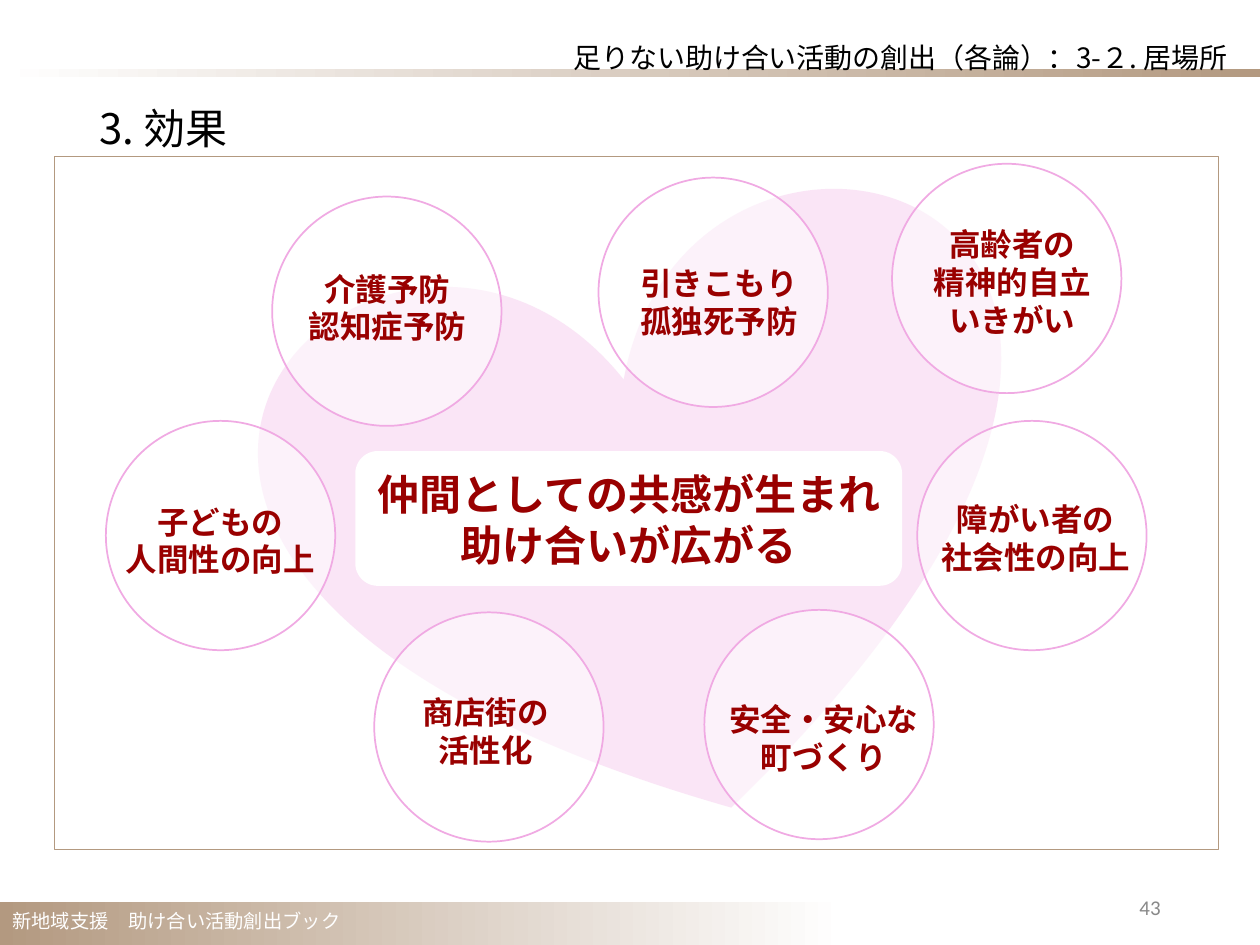
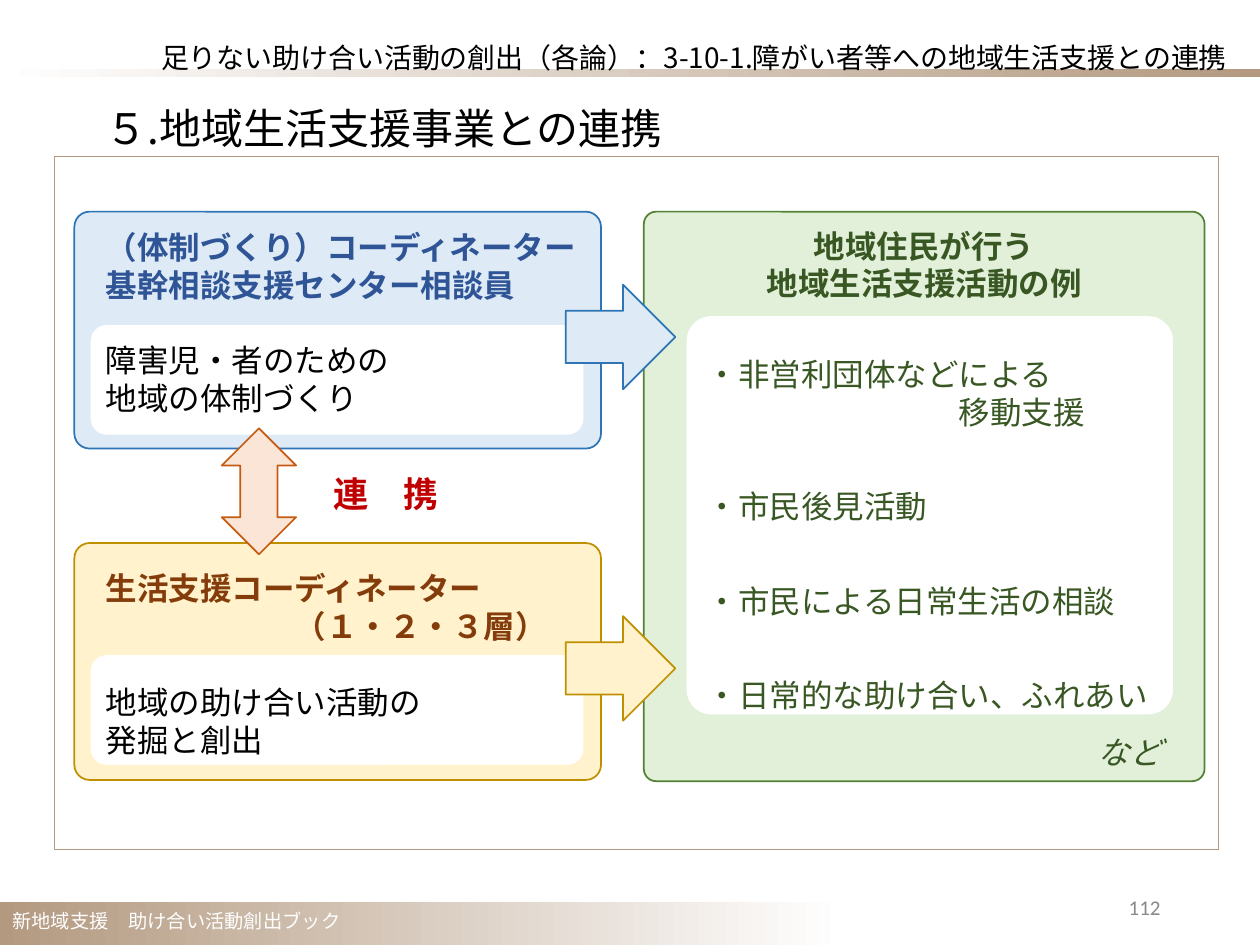
import dataclasses

import pptx
import pptx.dml.color
import pptx.enum.shapes
import pptx.enum.text
import pptx.oxml
import pptx.oxml.ns
import pptx.util

Inches = pptx.util.Inches
Shape = pptx.enum.shapes.MSO_SHAPE
Align = pptx.enum.text.PP_ALIGN
Anchor = pptx.enum.text.MSO_ANCHOR


@dataclasses.dataclass(frozen=True)
class Theme:
    """Colours, fonts and type sizes shared by the slides."""
    font: str = "Noto Sans CJK JP"
    number_font: str = "Calibri"
    white: str = "FFFFFF"
    black: str = "000000"
    brown: str = "B39980"
    grey: str = "898989"
    pink: str = "F0AAE3"
    crimson: str = "990000"
    red: str = "C00000"
    blue_fill: str = "DEEBF7"
    blue_line: str = "2E75B6"
    blue_text: str = "2F5597"
    yellow_fill: str = "FFF2CC"
    yellow_line: str = "BF9000"
    yellow_text: str = "843C0B"
    green_fill: str = "E2F0D9"
    green_line: str = "548235"
    green_text: str = "385723"
    orange_fill: str = "FBE5D6"
    orange_line: str = "C55A11"
    footer_size: float = 11
    number_size: float = 12
    header_size: float = 16
    body_size: float = 18
    link_size: float = 20
    title_size: float = 24
    blank_line: float = 21.6


THEME = Theme()


@dataclasses.dataclass(frozen=True)
class Style:
    """Look of one paragraph; indent in inches, before in points."""
    color: str = THEME.black
    size: float = THEME.body_size
    bold: bool = False
    italic: bool = False
    align: Align = Align.LEFT
    spacing: float = 1.0
    indent: float = 0
    before: float = 0
    font: str = THEME.font


def rgb(color):
    """Turn a hex string into a colour."""
    return pptx.dml.color.RGBColor.from_string(color)


def add_block(slide, kind, box, fill=None, line=None, width=1, alpha=None, corner=None):
    """Draw a preset shape with optional fill, outline, opacity and corner."""
    block = slide.shapes.add_shape(kind, *map(Inches, box))
    block.shadow.inherit = False
    if corner is not None:
        block.adjustments[0] = corner
    if fill:
        block.fill.solid()
        block.fill.fore_color.rgb = rgb(fill)
    else:
        block.fill.background()
    if alpha is not None:
        color = block._element.spPr.find(".//" + pptx.oxml.ns.qn("a:srgbClr"))
        opacity = pptx.oxml.parse_xml(
            f'<a:alpha {pptx.oxml.ns.nsdecls("a")} val="{alpha * 1000}"/>')
        color.append(opacity)
    if line:
        block.line.color.rgb = rgb(line)
        block.line.width = pptx.util.Pt(width)
    else:
        block.line.fill.background()
    return block


def add_band(slide, box, angle, end):
    """Draw a brown band that fades to white."""
    band = add_block(slide, Shape.RECTANGLE, box)
    band.fill.gradient()
    band.fill.gradient_angle = angle
    stops = zip(band.fill.gradient_stops, (THEME.brown, THEME.white), (0, end))
    for stop, color, position in stops:
        stop.color.rgb = rgb(color)
        stop.position = position


def style_paragraph(paragraph, style):
    """Apply a style to one paragraph."""
    paragraph.alignment = style.align
    paragraph.line_spacing = style.spacing
    if style.before:
        paragraph.space_before = pptx.util.Pt(style.before)
    properties = paragraph._p.get_or_add_pPr()
    if style.indent:
        properties.set("marL", str(Inches(style.indent)))
    font = paragraph.font
    font.size = pptx.util.Pt(style.size)
    font.bold = style.bold
    font.italic = style.italic
    font.color.rgb = rgb(style.color)
    font.name = style.font
    properties.find(pptx.oxml.ns.qn("a:defRPr")).append(pptx.oxml.parse_xml(
        f'<a:ea {pptx.oxml.ns.nsdecls("a")} typeface="{style.font}"/>'))


def add_text(slide, box, lines, style, anchor=Anchor.TOP, wrap=True):
    """Write lines, each a string or a pair of string and style changes."""
    frame = slide.shapes.add_textbox(*map(Inches, box)).text_frame
    frame.word_wrap = wrap
    frame.vertical_anchor = anchor
    for index, line in enumerate(lines):
        text, changes = (line, {}) if isinstance(line, str) else line
        paragraph = frame.paragraphs[0] if index == 0 else frame.add_paragraph()
        paragraph.text = text
        style_paragraph(paragraph, dataclasses.replace(style, **changes))


def add_page(deck, header, title, title_left, number):
    """Start a slide with bands, header, title, frame and footer."""
    slide = deck.slides.add_slide(deck.slide_layouts[6])
    add_band(slide, (0, 7.16, 10, 0.34), 0, 0.67)
    add_band(slide, (0, 0.55, 10, 0.06), 180, 1)
    add_text(slide, (0, 7.17, 2.82, 0.29), ["新地域支援　助け合い活動創出ブック"],
             Style(THEME.white, THEME.footer_size), wrap=False)
    add_text(slide, (0.53, 0.15, 9.31, 0.64), [header],
             Style(size=THEME.header_size, align=Align.RIGHT, spacing=0.9), Anchor.MIDDLE)
    add_text(slide, (title_left, 0.81, 9, 0.59), [title],
             Style(size=THEME.title_size, spacing=0.9))
    add_text(slide, (7.06, 6.95, 2.25, 0.4), [number],
             Style(THEME.grey, THEME.number_size, align=Align.RIGHT,
                   font=THEME.number_font), Anchor.BOTTOM)
    add_block(slide, Shape.RECTANGLE, (0.43, 1.24, 9.24, 5.5), line=THEME.brown, width=0.25)
    return slide


def add_effect(slide, circle, label, lines):
    """Draw one effect circle with its label."""
    add_block(slide, Shape.OVAL, (*circle, 1.82, 1.82), THEME.white, THEME.pink, alpha=50)
    add_text(slide, (*label, 0.1 + 0.3 * len(lines)), lines,
             Style(THEME.crimson, bold=True, align=Align.CENTER))


def add_coordinator(slide, top, panel_top, text_box, lines, colors):
    """Draw a coordinator card with its white panel, text and arrow."""
    fill, line, text_color = colors
    add_block(slide, Shape.ROUNDED_RECTANGLE, (0.59, top, 4.18, 1.88), fill, line, corner=0.064)
    add_block(slide, Shape.ROUNDED_RECTANGLE, (0.72, panel_top, 3.91, 0.87),
              THEME.white, corner=0.144)
    role, detail, task, goal = lines
    plain = {"color": THEME.black, "bold": False}
    add_text(slide, text_box,
             [role, detail, (task, {**plain, "before": THEME.blank_line}), (goal, plain)],
             Style(text_color, bold=True))
    return lambda: add_block(slide, Shape.RIGHT_ARROW, (4.49, top + 0.58, 0.87, 0.83), fill, line)


def build_effects(deck):
    """Build the slide on the effects of a gathering place."""
    slide = add_page(deck, "足りない助け合い活動の創出（各論）：3-２. 居場所",
                     "3. 効果", 0.69, "43")
    heart = add_block(slide, Shape.HEART, (2.26, 1.81, 5.95, 4.67), THEME.pink, alpha=30)
    heart.rotation = 345.9
    add_block(slide, Shape.ROUNDED_RECTANGLE, (2.82, 3.58, 4.34, 1.07), THEME.white)
    add_text(slide, (2.73, 3.67, 4.52, 0.91), ["仲間としての共感が生まれ", "助け合いが広がる"],
             Style(THEME.crimson, THEME.title_size, True, align=Align.CENTER))
    effects = [
        ((2.97, 4.86), (3.08, 5.45, 1.55), ["商店街の", "活性化"]),
        ((7.28, 3.34), (7.35, 3.92, 1.74), ["障がい者の", "社会性の向上"]),
        ((4.75, 1.41), (4.93, 2.05, 1.55), ["引きこもり", "孤独死予防"]),
        ((5.59, 4.84), (5.66, 5.51, 1.76), ["安全・安心な", "町づくり"]),
        ((2.16, 1.56), (2.3, 2.09, 1.55), ["介護予防", "認知症予防"]),
        ((0.84, 3.34), (0.9, 3.94, 1.79),
         [("子どもの", {"align": Align.LEFT, "indent": 0.25}),
          ("人間性の向上", {"align": Align.LEFT})]),
        ((7.08, 1.3), (6.99, 1.74, 2.09), ["高齢者の", "精神的自立", "いきがい"]),
    ]
    for circle, label, lines in effects:
        add_effect(slide, circle, label, lines)


def build_cooperation(deck):
    """Build the slide on cooperation with community life support."""
    slide = add_page(
        deck, "足りない助け合い活動の創出（各論）：3-10-1.障がい者等への地域生活支援との連携",
        "５.地域生活支援事業との連携", 0.74, "112")
    add_system_arrow = add_coordinator(
        slide, 1.68, 2.58, (0.74, 1.76, 4.28, 1.62),
        ["（体制づくり）コーディネーター", "基幹相談支援センター相談員",
         "障害児・者のための", "地域の体制づくり"],
        (THEME.blue_fill, THEME.blue_line, THEME.blue_text))
    add_support_arrow = add_coordinator(
        slide, 4.31, 5.2, (0.74, 4.47, 4.22, 1.62),
        ["生活支援コーディネーター", ("（１・２・３層）", {"indent": 1.5}),
         "地域の助け合い活動の", "発掘と創出"],
        (THEME.yellow_fill, THEME.yellow_line, THEME.yellow_text))

    add_block(slide, Shape.ROUNDED_RECTANGLE, (5.11, 1.68, 4.45, 4.52),
              THEME.green_fill, THEME.green_line, corner=0.022)
    add_block(slide, Shape.ROUNDED_RECTANGLE, (5.45, 2.51, 3.86, 3.16),
              THEME.white, corner=0.062)
    add_text(slide, (5.11, 1.75, 4.45, 0.74), ["地域住民が行う", "地域生活支援活動の例"],
             Style(THEME.green_text, bold=True, align=Align.CENTER))
    add_text(slide, (5.51, 2.32, 3.8, 3.94),
             ["・非営利団体などによる",
              ("移動支援", {"spacing": 1.0, "indent": 2}),
              "・市民後見活動",
              "・市民による日常生活の相談",
              "・日常的な助け合い、ふれあい",
              ("など", {"spacing": 1.5, "align": Align.RIGHT, "italic": True})],
             Style(THEME.green_text, spacing=2.5))

    add_text(slide, (2.55, 3.7, 1.52, 0.44), ["連　携"],
             Style(THEME.red, THEME.link_size, True))
    add_system_arrow()
    add_support_arrow()
    add_block(slide, Shape.UP_DOWN_ARROW, (1.76, 3.4, 0.59, 1),
              THEME.orange_fill, THEME.orange_line)


def main():
    """Build both slides and save the deck."""
    deck = pptx.Presentation()
    deck.slide_width, deck.slide_height = Inches(10), Inches(7.5)
    build_effects(deck)
    build_cooperation(deck)
    deck.save("out.pptx")


if __name__ == "__main__":
    main()
